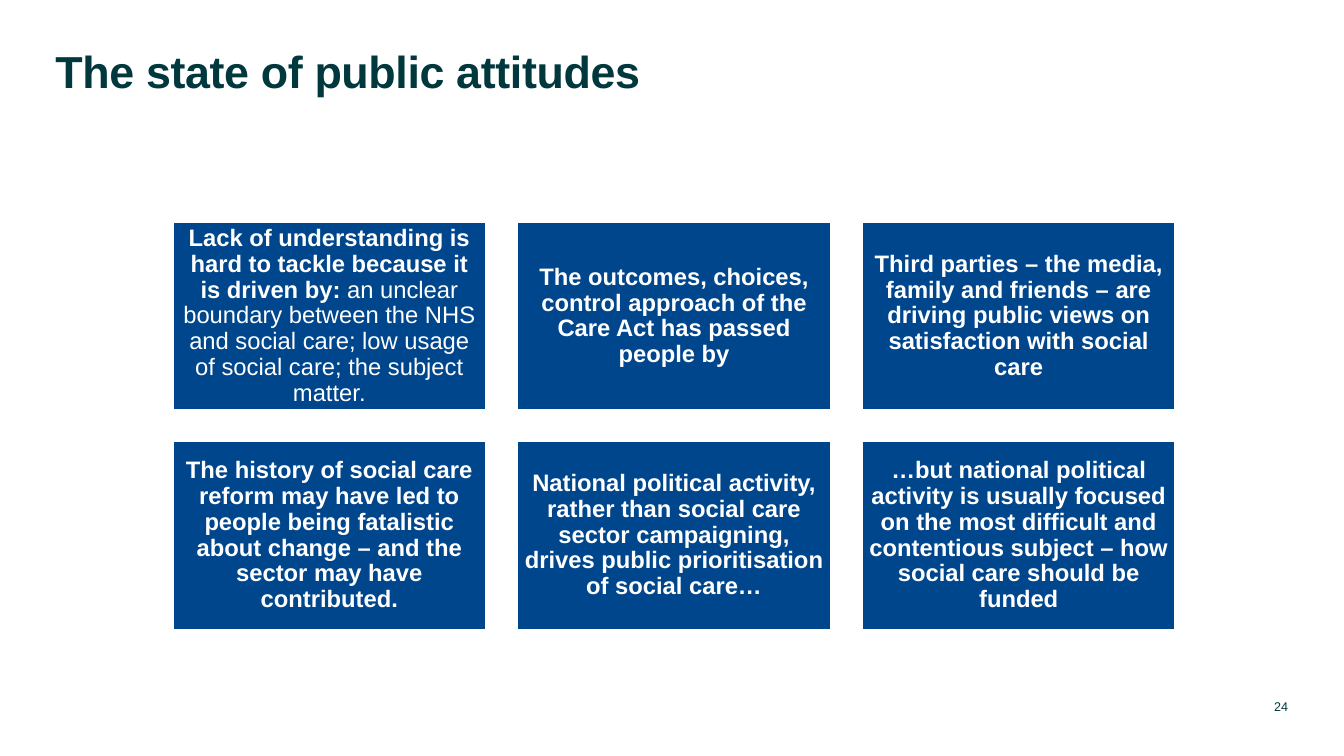
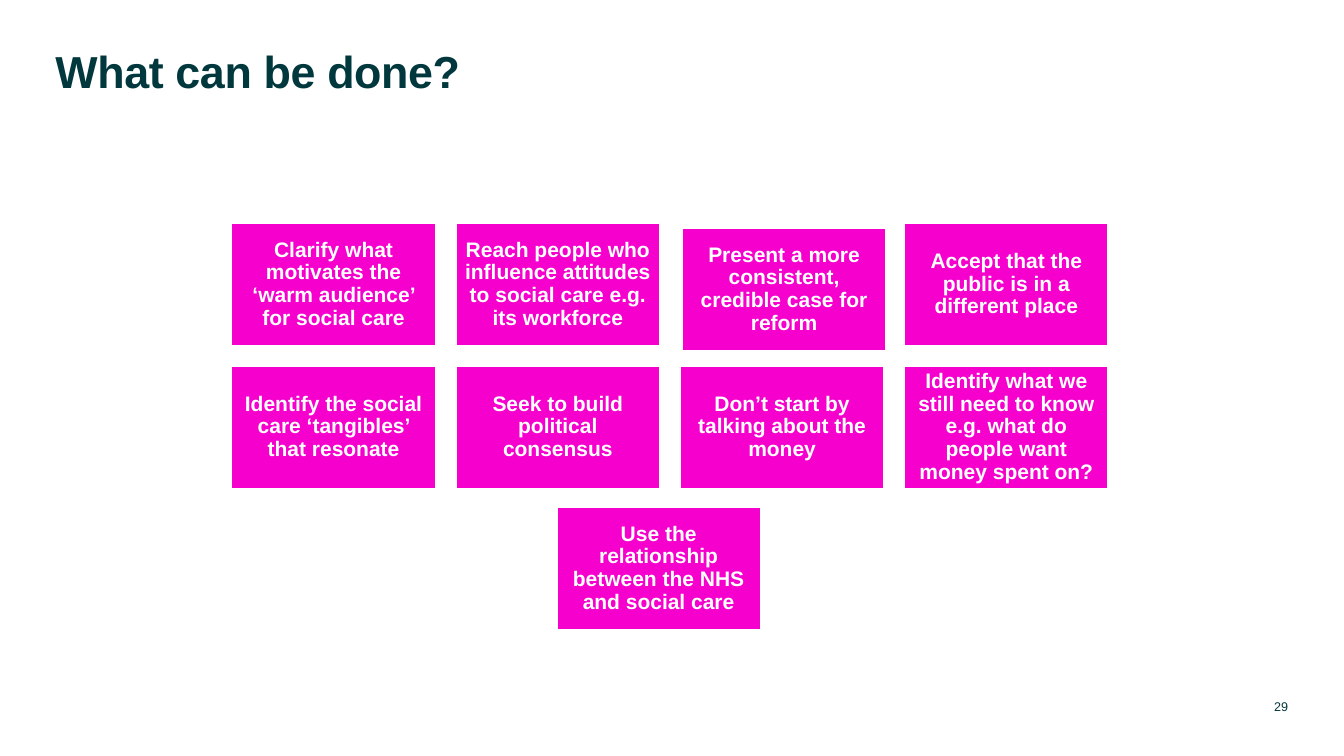
from dataclasses import dataclass

import pptx
import pptx.dml.color
import pptx.enum.shapes
import pptx.enum.text
import pptx.presentation
import pptx.slide
import pptx.text.text
import pptx.util

Inches = pptx.util.Inches
Pt = pptx.util.Pt
RGBColor = pptx.dml.color.RGBColor
Align = pptx.enum.text.PP_ALIGN
Anchor = pptx.enum.text.MSO_ANCHOR

DARK_TEAL = RGBColor(0x00, 0x38, 0x3D)
BLUE = RGBColor(0x00, 0x46, 0x8C)
MAGENTA = RGBColor(0xF5, 0x00, 0xCC)
WHITE = RGBColor(0xFF, 0xFF, 0xFF)
FONT = "Arial"
TITLE_ONLY = 5


@dataclass(frozen=True)
class Card:
    """A message at a grid cell; dx and dy shift it in inches."""
    column: int
    row: int
    message: str
    detail: str = ""
    dx: float = 0
    dy: float = 0


@dataclass(frozen=True)
class CardGrid:
    """Card style and grid, with lengths in inches and text size in points."""
    left: float
    top: float
    width: float
    height: float
    column_step: float
    row_step: float
    inset: float
    text_size: int
    fill: RGBColor


ATTITUDES_GRID = CardGrid(3.43, 4.41, 6.21, 3.73, 6.84, 4.35, 0.14, 34, BLUE)
ACTIONS_GRID = CardGrid(4.6, 4.43, 4.04, 2.43, 4.45, 2.83, 0.12, 30, MAGENTA)

ATTITUDES = [
    Card(0, 0, "Lack of understanding is hard to tackle because it is driven by: ",
         "an unclear boundary between the NHS and social care; low usage of "
         "social care; the subject matter."),
    Card(1, 0, "The outcomes, choices, control approach of the Care Act has "
               "passed people by"),
    Card(2, 0, "Third parties – the media, family and friends – are driving "
               "public views on satisfaction with social care"),
    Card(0, 1, "The history of social care reform may have led to people being "
               "fatalistic about change – and the sector may have contributed."),
    Card(1, 1, "National political activity, rather than social care sector "
               "campaigning, drives public prioritisation of social care…"),
    Card(2, 1, "…but national political activity is usually focused on the most "
               "difficult and contentious subject – how social care should be funded"),
]

ACTIONS = [
    Card(0, 0, "Clarify what motivates the ‘warm audience’ for social care"),
    Card(1, 0, "Reach people who influence attitudes to social care e.g. its workforce"),
    Card(1, 2, "Use the relationship between the NHS and social care", dx=2, dy=-0.03),
    Card(3, 0, "Accept that the public is in a different place"),
    Card(0, 1, "Identify the social care ‘tangibles’ that resonate"),
    Card(1, 1, "Seek to build political consensus"),
    Card(2, 1, "Don’t start by talking about the money"),
    Card(3, 1, "Identify what we still need to know e.g. what do people want "
               "money spent on?"),
    Card(2, 0, "Present a more consistent, credible case for reform", dx=0.04, dy=0.1),
]


def prepare_frame(frame: pptx.text.text.TextFrame, inset: float, anchor: Anchor,
                  align: Align) -> pptx.text.text._Paragraph:
    """Set up wrapping, margins and alignment; return the first paragraph."""
    frame.word_wrap = True
    frame.auto_size = pptx.enum.text.MSO_AUTO_SIZE.NONE
    frame.margin_left = frame.margin_right = Inches(inset)
    frame.margin_top = frame.margin_bottom = Inches(inset)
    frame.vertical_anchor = anchor
    paragraph = frame.paragraphs[0]
    paragraph.alignment = align
    return paragraph


def add_run(paragraph: pptx.text.text._Paragraph, text: str, size: int,
            color: RGBColor, bold: bool) -> pptx.text.text._Run:
    run = paragraph.add_run()
    run.text = text
    run.font.name = FONT
    run.font.size = Pt(size)
    run.font.color.rgb = color
    run.font.bold = bold
    return run


def add_titled_slide(deck: pptx.presentation.Presentation, heading: str,
                     number: int) -> pptx.slide.Slide:
    slide = deck.slides.add_slide(deck.slide_layouts[TITLE_ONLY])
    title = slide.shapes.title
    title.left, title.top = Inches(1.1), Inches(0.98)
    title.width, title.height = Inches(24.46), Inches(1.66)
    paragraph = prepare_frame(title.text_frame, 0, Anchor.TOP, Align.LEFT)
    paragraph.line_spacing = 0.9
    run = add_run(paragraph, heading, 64, DARK_TEAL, True)
    run.font._element.set("spc", "-50")

    page_number = slide.shapes.add_textbox(
        Inches(23.99), Inches(13.7), Inches(1.57), Inches(0.47))
    paragraph = prepare_frame(page_number.text_frame, 0, Anchor.BOTTOM, Align.RIGHT)
    add_run(paragraph, str(number), 18, DARK_TEAL, False)
    return slide


def add_card(slide: pptx.slide.Slide, grid: CardGrid, card: Card) -> None:
    box = slide.shapes.add_shape(
        pptx.enum.shapes.MSO_SHAPE.RECTANGLE,
        Inches(grid.left + card.column * grid.column_step + card.dx),
        Inches(grid.top + card.row * grid.row_step + card.dy),
        Inches(grid.width), Inches(grid.height))
    box.shadow.inherit = False
    box.fill.solid()
    box.fill.fore_color.rgb = grid.fill
    box.line.color.rgb = WHITE
    box.line.width = Pt(2)
    paragraph = prepare_frame(box.text_frame, grid.inset, Anchor.MIDDLE, Align.CENTER)
    paragraph.line_spacing = 0.9
    add_run(paragraph, card.message, grid.text_size, WHITE, True)
    if card.detail:
        add_run(paragraph, card.detail, grid.text_size, WHITE, False)


def main() -> None:
    deck = pptx.Presentation()
    deck.slide_width, deck.slide_height = Inches(26.67), Inches(15)
    for heading, number, grid, cards in (
        ("The state of public attitudes", 24, ATTITUDES_GRID, ATTITUDES),
        ("What can be done?", 29, ACTIONS_GRID, ACTIONS),
    ):
        slide = add_titled_slide(deck, heading, number)
        for card in cards:
            add_card(slide, grid, card)
    deck.save("out.pptx")


if __name__ == "__main__":
    main()
